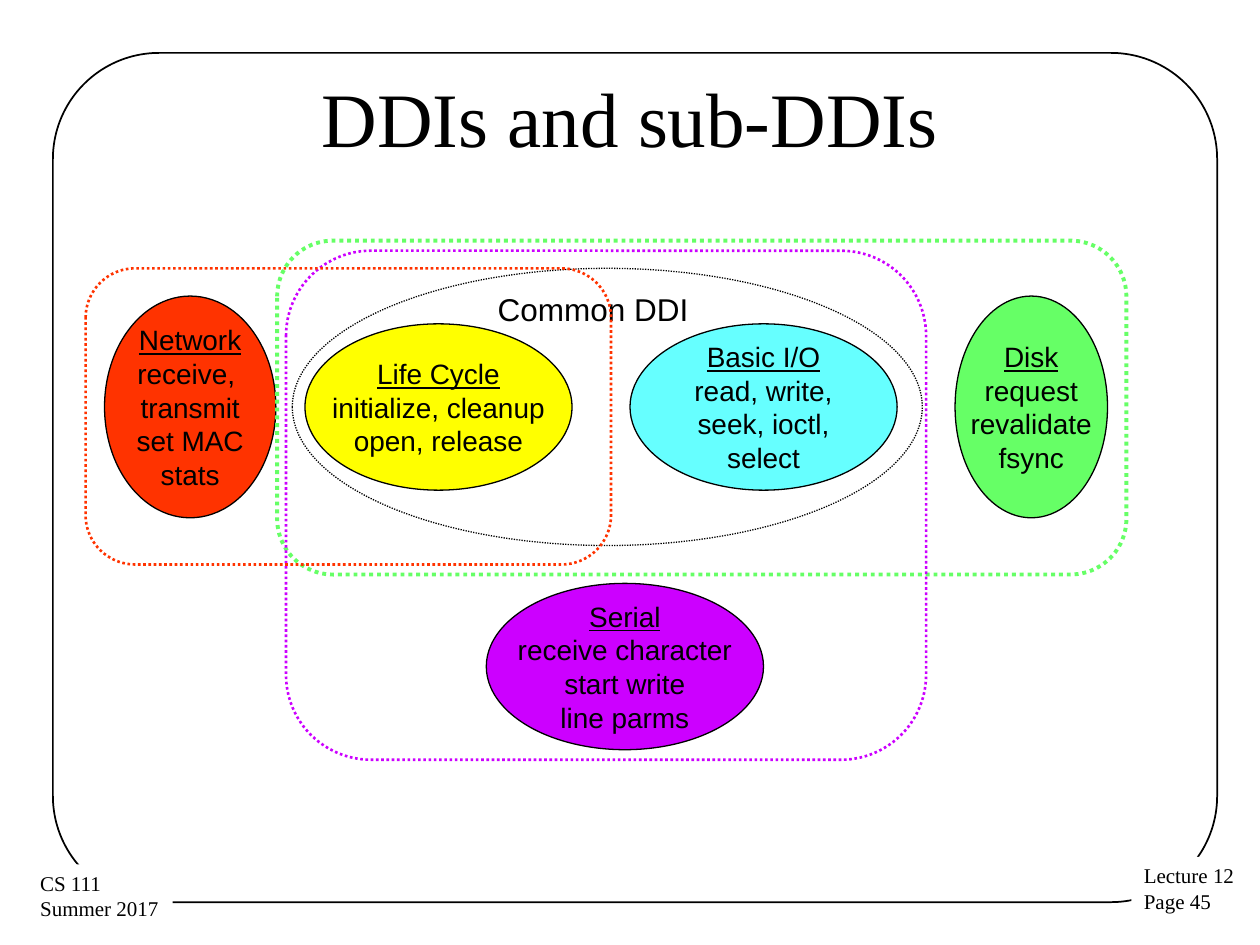
import pptx
import pptx.dml.color
import pptx.enum.dml
import pptx.enum.shapes
import pptx.enum.text
import pptx.util

Pt = pptx.util.Pt
RGBColor = pptx.dml.color.RGBColor
Shape = pptx.enum.shapes.MSO_SHAPE
Align = pptx.enum.text.PP_ALIGN
Anchor = pptx.enum.text.MSO_ANCHOR
DOTTED = pptx.enum.dml.MSO_LINE.ROUND_DOT

WIDTH, HEIGHT = pptx.util.Inches(10), pptx.util.Inches(7.5)
COLUMNS, ROWS = 100, 75

BLACK = RGBColor(0, 0, 0)
WHITE = RGBColor(255, 255, 255)
CYAN = RGBColor(0x66, 0xFF, 0xFF)
YELLOW = RGBColor(0xFF, 0xFF, 0)
GREEN = RGBColor(0x66, 0xFF, 0x66)
RED = RGBColor(0xFF, 0x33, 0)
PURPLE = RGBColor(0xCC, 0, 0xFF)

TITLE = {"name": "Times New Roman", "size": Pt(44)}
FOOTER = {"name": "Times New Roman", "size": Pt(12)}
LABEL = {"name": "Arial", "size": Pt(18)}
BODY = {"name": "Arial", "size": Pt(16)}
HEADING = {**BODY, "underline": True}

WIDE_MARGINS = {"margin_left": Pt(7.2), "margin_right": Pt(7.2),
                "margin_top": Pt(3.6), "margin_bottom": Pt(3.6)}
SLIM_MARGINS = {"margin_left": Pt(6.5), "margin_right": Pt(6.5),
                "margin_top": Pt(2.9), "margin_bottom": Pt(2.9)}
TITLE_FRAME = {**WIDE_MARGINS, "word_wrap": True, "vertical_anchor": Anchor.MIDDLE}
FOOTER_FRAME = {**WIDE_MARGINS, "word_wrap": False, "vertical_anchor": Anchor.TOP}
LABEL_FRAME = {**SLIM_MARGINS, "word_wrap": True, "vertical_anchor": Anchor.TOP}
GROUP_FRAME = {**SLIM_MARGINS, "word_wrap": False, "vertical_anchor": Anchor.MIDDLE}

FOOTERS = [
    ((89.8, 68, 9.3, 5.1), ["Lecture 12", "Page 45"]),
    ((2.2, 68.6, 11.5, 5.1), ["CS 111", "Summer 2017"]),
]
COMMON_GROUPS = [
    ((50, 25.7, 21.2, 13.2), CYAN,
     ["Basic I/O", "read, write,", "seek, ioctl,", "select"]),
    ((24.2, 25.7, 21.2, 13.2), YELLOW,
     ["Life Cycle", "initialize, cleanup", "open, release"]),
]
DEVICE_GROUPS = [
    ((75.8, 23.5, 12.1, 17.6), GREEN,
     ["Disk", "request", "revalidate", "fsync"]),
    ((8.3, 23.5, 13.6, 17.6), RED,
     ["Network", "receive, ", "transmit", "set MAC", "stats"]),
    ((38.6, 46.3, 22, 13.2), PURPLE,
     ["Serial", "receive character", "start write", "line parms"]),
]
DEVICE_OUTLINES = [
    ((22, 19.1, 67.4, 26.5), GREEN, 2.25),
    ((22.7, 19.9, 50.8, 40.4), PURPLE, 1.5),
    ((6.8, 21.3, 41.7, 23.5), RED, 1.5),
]


def place(area):
    column, row, columns, rows = area
    across, down = WIDTH / COLUMNS, HEIGHT / ROWS
    return [round(length) for length in
            (column * across, row * down, columns * across, rows * down)]


def apply(target, values):
    for name, value in values.items():
        setattr(target, name, value)


def write(box, lines, frame_format, fonts, alignment):
    frame = box.text_frame
    apply(frame, frame_format)
    for index, text in enumerate(lines):
        para = frame.paragraphs[0] if index == 0 else frame.add_paragraph()
        para.alignment = alignment
        span = para.add_run()
        span.text = text
        apply(span.font, fonts[min(index, len(fonts) - 1)])
        span.font.color.rgb = BLACK


def add_text(page, area, lines, frame_format, font, alignment=Align.LEFT):
    box = page.shapes.add_textbox(*place(area))
    write(box, lines, frame_format, [font], alignment)
    return box


def add_outline(page, kind, area, color, weight, dash=None, corner=None):
    shape = page.shapes.add_shape(kind, *place(area))
    shape.shadow.inherit = False
    shape.fill.background()
    shape.line.color.rgb = color
    apply(shape.line, {"width": Pt(weight), "dash_style": dash})
    if corner is not None:
        shape.adjustments[0] = corner
    return shape


def add_group(page, area, color, lines):
    oval = add_outline(page, Shape.OVAL, area, BLACK, 0.75)
    oval.fill.solid()
    oval.fill.fore_color.rgb = color
    write(oval, lines, GROUP_FRAME, [HEADING, BODY], Align.CENTER)


def add_footer(page, area, lines):
    box = add_text(page, area, lines, FOOTER_FRAME, FOOTER)
    box.fill.solid()
    box.fill.fore_color.rgb = WHITE


def main():
    deck = pptx.Presentation()
    apply(deck, {"slide_width": WIDTH, "slide_height": HEIGHT})
    page = deck.slides.add_slide(deck.slide_layouts[6])
    add_outline(page, Shape.ROUNDED_RECTANGLE, (4.2, 4.2, 92.4, 67.4),
                BLACK, 1, corner=0.125)
    for area, lines in FOOTERS:
        add_footer(page, area, lines)
    add_text(page, (5, 3, 90, 12.5), ["DDIs and sub-DDIs"],
             TITLE_FRAME, TITLE, Align.CENTER)
    for group in COMMON_GROUPS:
        add_group(page, *group)
    add_outline(page, Shape.OVAL, (23.2, 21.3, 50, 22), BLACK, 0.75, DOTTED)
    add_text(page, (38.6, 22.6, 20.5, 3.9), ["Common DDI"], LABEL_FRAME, LABEL)
    for group in DEVICE_GROUPS:
        add_group(page, *group)
    for area, color, weight in DEVICE_OUTLINES:
        add_outline(page, Shape.ROUNDED_RECTANGLE, area, color, weight,
                    DOTTED, corner=0.167)
    deck.save("out.pptx")


if __name__ == "__main__":
    main()
